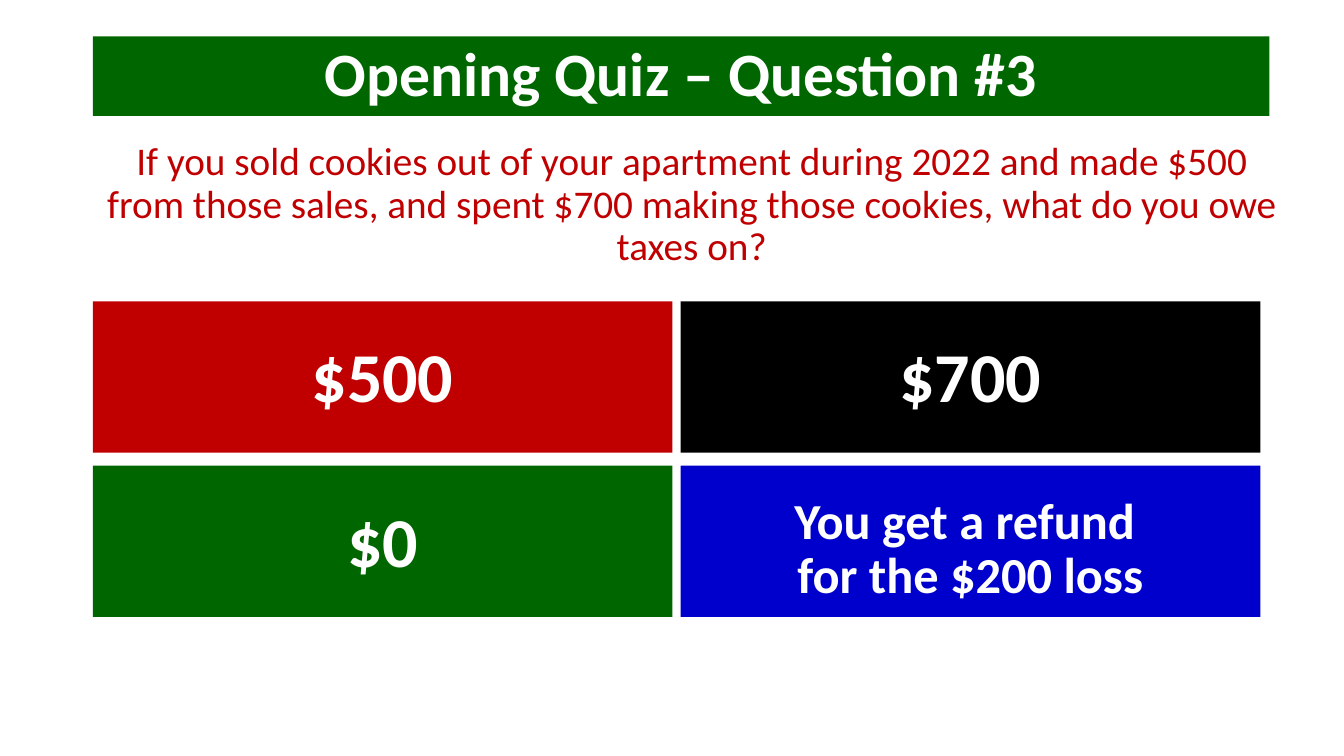
from pptx import Presentation
from pptx.dml.color import RGBColor
from pptx.enum.shapes import MSO_SHAPE
from pptx.enum.text import MSO_ANCHOR, MSO_AUTO_SIZE, PP_ALIGN
from pptx.util import Inches, Pt

WHITE = RGBColor(0xFF, 0xFF, 0xFF)
BLACK = RGBColor(0x00, 0x00, 0x00)
RED = RGBColor(0xC0, 0x00, 0x00)
GREEN = RGBColor(0x00, 0x66, 0x00)
BLUE = RGBColor(0x00, 0x00, 0xCC)

FONT = "Calibri"
LEFT = 0.92
ANSWER_TOP = 2.99
ANSWER_WIDTH, ANSWER_HEIGHT = 5.75, 1.5
COLUMN_STEP, ROW_STEP = 5.83, 1.63
COLUMNS = 2

# Lines of text, fill, size, top inset
ANSWERS = [
    (["$500"], RED, 50, 0.11),
    (["$700"], BLACK, 50, 0.11),
    (["$0"], GREEN, 50, 0.11),
    (["You get a refund ", "for the $200 loss"], BLUE, 36, 0.23),
]


def box(left, top, width, height):
    return [Inches(length) for length in (left, top, width, height)]


def write_centered(frame, lines, size, color, bold=False, anchor=MSO_ANCHOR.MIDDLE):
    """Fill the frame with one centred paragraph, broken between the lines."""
    frame.word_wrap = True
    frame.auto_size = MSO_AUTO_SIZE.NONE
    frame.vertical_anchor = anchor
    paragraph = frame.paragraphs[0]
    paragraph.alignment = PP_ALIGN.CENTER
    paragraph.line_spacing = 0.9
    paragraph.space_before = Pt(0)
    for index, line in enumerate(lines):
        if index:
            paragraph.add_line_break()
        run = paragraph.add_run()
        run.text = line
        run.font.name = FONT
        run.font.size = Pt(size)
        run.font.bold = bold
        run.font.color.rgb = color


def set_title(slide, text):
    title = slide.shapes.title
    title.left, title.top, title.width, title.height = box(LEFT, 0.36, 11.67, 0.79)
    title.fill.solid()
    title.fill.fore_color.rgb = GREEN
    write_centered(title.text_frame, [text], 44, WHITE, bold=True)


def add_question(slide, text):
    question = slide.shapes.add_textbox(*box(LEFT, 1.36, 11.88, 5.4))
    write_centered(question.text_frame, [text], 28, RED, anchor=MSO_ANCHOR.TOP)


def add_answer(slide, position, lines, fill, size, top_inset):
    row, column = divmod(position, COLUMNS)
    answer = slide.shapes.add_shape(
        MSO_SHAPE.RECTANGLE,
        *box(LEFT + column * COLUMN_STEP, ANSWER_TOP + row * ROW_STEP,
             ANSWER_WIDTH, ANSWER_HEIGHT))
    answer.shadow.inherit = False
    answer.fill.solid()
    answer.fill.fore_color.rgb = fill
    answer.line.fill.background()
    answer.text_frame.margin_top = Inches(top_inset)
    write_centered(answer.text_frame, lines, size, WHITE, bold=True)


def main():
    deck = Presentation()
    deck.slide_width, deck.slide_height = Inches(13.33), Inches(7.5)
    slide = deck.slides.add_slide(deck.slide_layouts.get_by_name("Title Only"))
    set_title(slide, "Opening Quiz – Question #3")
    add_question(slide, "If you sold cookies out of your apartment during 2022 and "
                        "made $500 from those sales, and spent $700 making those "
                        "cookies, what do you owe taxes on?")
    for position, answer in enumerate(ANSWERS):
        add_answer(slide, position, *answer)
    deck.save("out.pptx")


if __name__ == "__main__":
    main()
